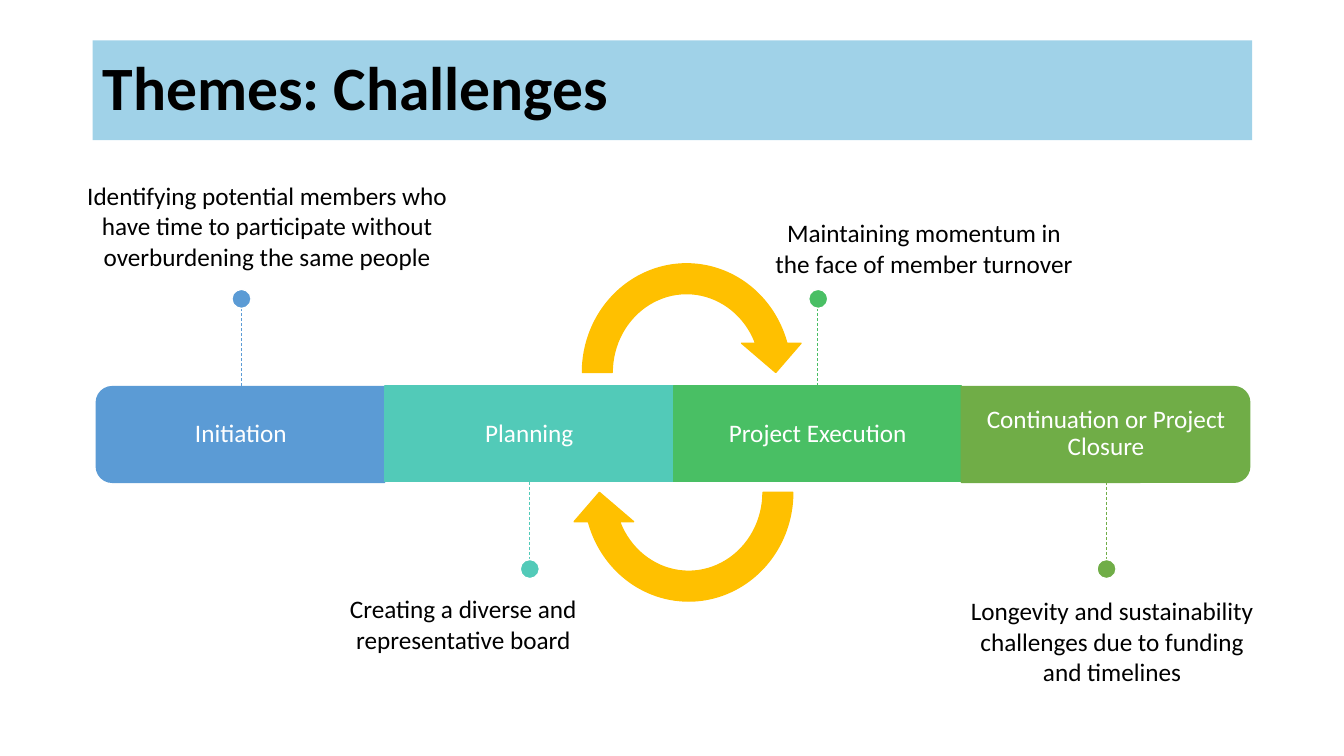
from lxml import etree
from pptx import Presentation
from pptx.dml.color import RGBColor
from pptx.enum.dml import MSO_LINE
from pptx.enum.shapes import MSO_CONNECTOR, MSO_SHAPE
from pptx.enum.text import MSO_ANCHOR, MSO_AUTO_SIZE, PP_ALIGN
from pptx.oxml.ns import qn
from pptx.util import Pt

PX = 9144
FONT = "Calibri"
BLACK = RGBColor(0x00, 0x00, 0x00)
WHITE = RGBColor(0xFF, 0xFF, 0xFF)
PALE_BLUE = RGBColor(0xA0, 0xD2, 0xE8)
BLUE = RGBColor(0x5B, 0x9B, 0xD5)
TEAL = RGBColor(0x52, 0xCA, 0xB8)
GREEN = RGBColor(0x49, 0xBF, 0x64)
OLIVE = RGBColor(0x70, 0xAD, 0x47)
GOLD = RGBColor(0xFF, 0xC0, 0x00)
RECTANGLE = MSO_SHAPE.RECTANGLE
ROUNDED_END = MSO_SHAPE.ROUND_2_SAME_RECTANGLE
OVAL = MSO_SHAPE.OVAL
CIRCULAR_ARROW = MSO_SHAPE.CIRCULAR_ARROW
STRAIGHT = MSO_CONNECTOR.STRAIGHT
DASH = MSO_LINE.DASH
MIDDLE = MSO_ANCHOR.MIDDLE
GROW = MSO_AUTO_SIZE.SHAPE_TO_FIT_TEXT
LEFT, CENTER = PP_ALIGN.LEFT, PP_ALIGN.CENTER

prs = Presentation()
prs.slide_width, prs.slide_height = 1333 * PX, 750 * PX
slide = prs.slides.add_slide(prs.slide_layouts[6])
shapes = slide.shapes


def add_filled(kind, left, top, width, height, fill, outline=None, rotation=0):
    shape = shapes.add_shape(kind, left * PX, top * PX, width * PX, height * PX)
    shape.shadow.inherit = False
    shape.rotation = rotation
    shape.fill.solid()
    shape.fill.fore_color.rgb = fill
    if outline is None:
        shape.line.fill.background()
    else:
        shape.line.color.rgb = outline
        shape.line.width = Pt(1)
    return shape


def write(shape, text, size, color, align=CENTER, spacing=None, bold=False):
    shape.text_frame.word_wrap = True
    paragraph = shape.text_frame.paragraphs[0]
    paragraph.alignment = align
    paragraph.line_spacing = spacing
    run = paragraph.add_run()
    run.text = text
    run.font.name = FONT
    run.font.size = Pt(size)
    run.font.bold = bold
    run.font.color.rgb = color


STAGE_LEFT, STAGE_TOP, STAGE_WIDTH, STAGE_HEIGHT = 96, 383, 286, 95
STEM, DOT = 77, 19
stages = [
    ("Initiation", BLUE, 270, True),
    ("Planning", TEAL, None, False),
    ("Project Execution", GREEN, None, True),
    ("Continuation or Project Closure", OLIVE, 90, False),
]

for index, (stage, color, rotation, upward) in enumerate(stages):
    left = STAGE_LEFT + index * STAGE_WIDTH
    middle = left + STAGE_WIDTH // 2
    if rotation is None:
        bar = add_filled(RECTANGLE, left, STAGE_TOP, STAGE_WIDTH, STAGE_HEIGHT, color, color)
    else:
        turn = (STAGE_WIDTH - STAGE_HEIGHT) // 2
        bar = add_filled(ROUNDED_END, left + turn, STAGE_TOP - turn,
                         STAGE_HEIGHT, STAGE_WIDTH, color, color, rotation)

    label = shapes.add_textbox(left * PX, STAGE_TOP * PX, STAGE_WIDTH * PX, STAGE_HEIGHT * PX)
    frame = label.text_frame
    frame.vertical_anchor = MIDDLE
    frame.margin_left = frame.margin_right = frame.margin_top = frame.margin_bottom = 15 * PX
    write(label, stage, 18, WHITE, spacing=0.9)

    edge = STAGE_TOP if upward else STAGE_TOP + STAGE_HEIGHT
    tip = edge - STEM if upward else edge + STEM
    stem = shapes.add_connector(STRAIGHT, middle * PX, edge * PX, middle * PX, tip * PX)
    if rotation is None:
        stem.begin_connect(bar, 0 if upward else 2)
    stem.line.color.rgb = color
    stem.line.width = Pt(0.5)
    stem.line.dash_style = DASH
    etree.SubElement(stem._element.spPr, qn("a:effectLst"))

    dot_top = tip - DOT if upward else tip
    add_filled(OVAL, middle - DOT // 2, dot_top, DOT, DOT, color, WHITE)

title = add_filled(RECTANGLE, 92, 40, 1150, 99, PALE_BLUE)
title.text_frame.vertical_anchor = MIDDLE
write(title, "Themes: Challenges", 44, BLACK, LEFT, 0.9, True)

for left, top, rotation in [(563, 247, 0), (565, 366, 180)]:
    add_filled(CIRCULAR_ARROW, left, top, 236, 245, GOLD, GOLD, rotation)

challenges = [
    (63, 174, 404, 101, "Identifying potential members who have time to participate "
                        "without overburdening the same people"),
    (290, 584, 339, 71, "Creating a diverse and representative board"),
    (755, 211, 323, 71, "Maintaining momentum in the face of member turnover"),
    (948, 586, 310, 101, "Longevity and sustainability challenges due to funding and timelines"),
]
for left, top, width, height, challenge in challenges:
    caption = shapes.add_textbox(left * PX, top * PX, width * PX, height * PX)
    caption.text_frame.auto_size = GROW
    write(caption, challenge, 18, BLACK)

prs.save("out.pptx")
